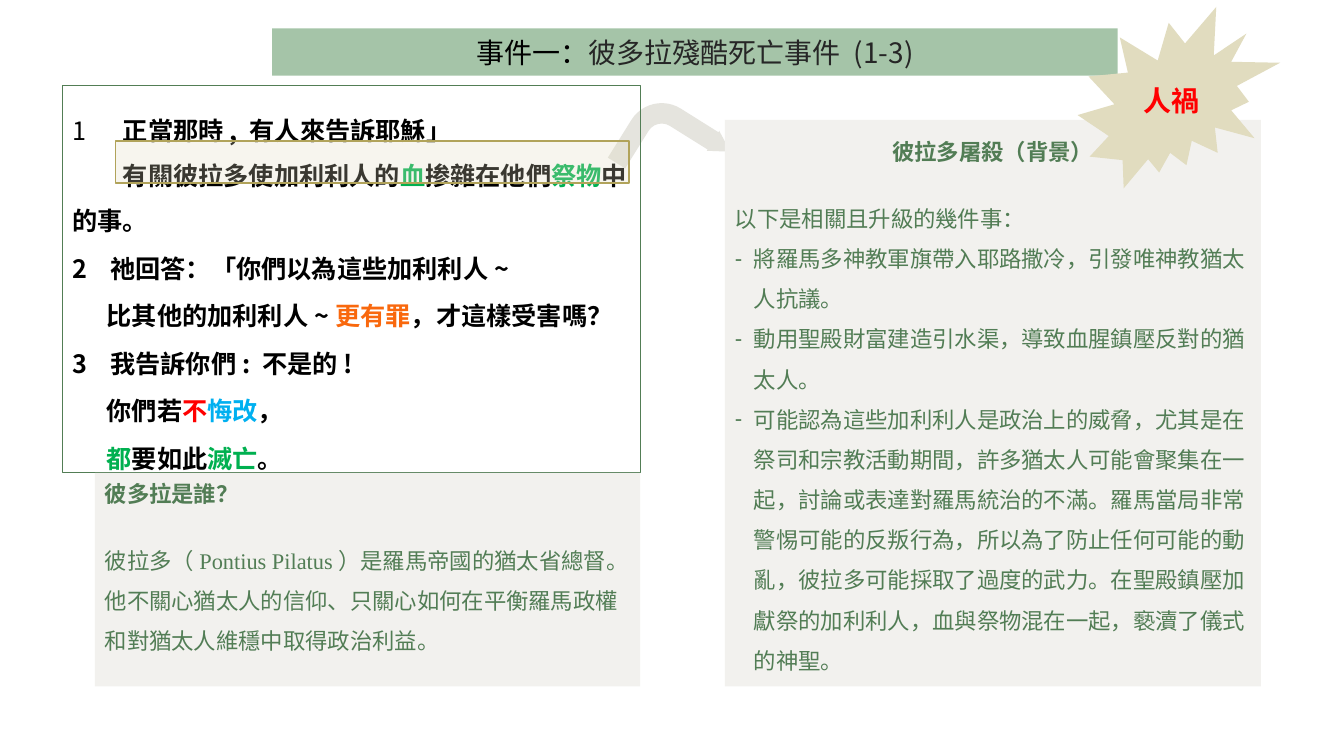
from lxml.etree import SubElement
from pptx import Presentation
from pptx.dml.color import RGBColor
from pptx.enum.shapes import MSO_SHAPE
from pptx.enum.text import MSO_ANCHOR, MSO_AUTO_SIZE, PP_ALIGN
from pptx.oxml.ns import qn
from pptx.util import Pt

BLACK = RGBColor(0, 0, 0)
INK = RGBColor(0x26, 0x26, 0x26)
GREEN = RGBColor(0x00, 0xB0, 0x50)
ORANGE = RGBColor(0xF9, 0x68, 0x0D)
RED = RGBColor(0xFF, 0x00, 0x00)
BLUE = RGBColor(0x00, 0xB0, 0xF0)
MOSS = RGBColor(0x52, 0x7D, 0x55)
SAGE = RGBColor(0x72, 0xA3, 0x76)
PALE = RGBColor(0xF2, 0xF1, 0xEE)
GREY = RGBColor(0xE5, 0xE4, 0xDE)
SAND = RGBColor(0xE1, 0xDC, 0xBF)
GOLD = RGBColor(0xB1, 0xA3, 0x5A)
SANS, HAN, SERIF = "Noto Sans CJK SC", "Noto Sans CJK TC", "Times New Roman"

VERSE = [
    ([("1", BLACK), ("\t正當那時, 有人來告訴耶穌」", BLACK)], 0, 0, None),
    ([("有關彼拉多使加利利人的", BLACK), ("血", GREEN), ("掺雜在他們", BLACK),
      ("祭物", GREEN), ("中的事。", BLACK)], 0, 36, None),
    ([("祂回答：「你們以為這些加利利人~", BLACK)], 27, -27, 2),
    ([("比其他的加利利人~", BLACK), ("更有罪", ORANGE),
      ("，才這樣受害嗎？", BLACK)], 24.5, 0, None),
    ([("我告訴你們: 不是的!", BLACK)], 27, -27, 3),
    ([("你們若", BLACK), ("不", RED), ("悔改", BLUE), ("，", BLACK)], 24.5, 0, None),
    ([("都", GREEN), ("要如此", BLACK), ("滅亡", GREEN), ("。", BLACK)], 24.5, 0, None),
]
WHO = [[("彼拉多", "Arial"), ("（Pontius Pilatus）", SERIF),
        ("是羅馬帝國的猶太省總督。他不關心猶太人的信仰、"
         "只關心如何在平衡羅馬政權和對猶太人維穩中取得政治利益。", "Arial")]]
ACTS = [
    "將羅馬多神教軍旗帶入耶路撒冷，引發唯神教猶太人抗議。",
    "動用聖殿財富建造引水渠，導致血腥鎮壓反對的猶太人。",
    "可能認為這些加利利人是政治上的威脅，尤其是在祭司和宗教活動期間，"
    "許多猶太人可能會聚集在一起，討論或表達對羅馬統治的不滿。"
    "羅馬當局非常警惕可能的反叛行為，所以為了防止任何可能的動亂，"
    "彼拉多可能採取了過度的武力。在聖殿鎮壓加獻祭的加利利人，"
    "血與祭物混在一起，褻瀆了儀式的神聖。",
]
PAST = [[(text, "Arial")] for text in ["以下是相關且升級的幾件事："] + ACTS]


def place(shape, box):
    shape.left, shape.top, shape.width, shape.height = map(Pt, box)


def paint(shape, fill=None, line=None, width=1, alpha=None):
    if fill is None:
        shape.fill.background()
    else:
        shape.fill.solid()
        shape.fill.fore_color.rgb = fill
    if alpha:
        tint = shape._element.spPr.find(qn("a:solidFill"))[0]
        SubElement(tint, qn("a:alpha")).set("val", str(alpha * 1000))
    if line is None:
        shape.line.fill.background()
    else:
        shape.line.color.rgb = line
        shape.line.width = Pt(width)


def draw(slide, kind, box):
    shape = slide.shapes.add_shape(kind, *map(Pt, box))
    shape.shadow.inherit = False
    return shape


def write(par, text, size, color, bold=False, face="Arial", east=SANS):
    run = par.add_run()
    run.text = text
    font = run.font
    font.size, font.bold, font.name = Pt(size), bold, face
    font.color.rgb = color
    SubElement(run._r.get_or_add_rPr(), qn("a:ea")).set("typeface", east)


def fit(shape, top):
    frame = shape.text_frame
    frame.word_wrap = True
    frame.auto_size = MSO_AUTO_SIZE.NONE
    frame.vertical_anchor = MSO_ANCHOR.TOP
    frame.margin_left = frame.margin_right = Pt(7.2)
    frame.margin_top, frame.margin_bottom = Pt(top), 0
    return frame


def start(frame, index, pitch, before=0):
    par = frame.add_paragraph() if index else frame.paragraphs[0]
    par.alignment = PP_ALIGN.LEFT
    par.line_spacing = Pt(pitch)
    par.space_before, par.space_after = Pt(before), Pt(0)
    return par


def mark(par, left=0, first=0, tag="buNone", **attrs):
    props = par._p.get_or_add_pPr()
    props.set("marL", str(Pt(left)))
    props.set("indent", str(Pt(first)))
    node = SubElement(props, qn("a:" + tag))
    for name, value in attrs.items():
        node.set(name, value)
    return props


def banner(shape, box):
    place(shape, box)
    paint(shape, SAGE, alpha=63)
    frame = fit(shape, 0)
    frame.vertical_anchor = MSO_ANCHOR.MIDDLE
    par = frame.paragraphs[0]
    par.alignment = PP_ALIGN.CENTER
    write(par, "事件一：", 20, BLACK, face=SANS)
    write(par, "彼多拉殘酷死亡事件 (1-3)", 20, INK, face=SANS)


def verse(slide, shape, box):
    place(shape, box)
    paint(shape, None, MOSS, 0.75)
    frame = fit(shape, 11)
    for i, (runs, left, first, num) in enumerate(VERSE):
        par = start(frame, i, 32, 2 if i > 1 else 0)
        if num:
            mark(par, left, first, "buAutoNum", type="arabicPlain", startAt=str(num))
        else:
            props = mark(par, left, first)
            if i == 0:
                tabs = SubElement(props, qn("a:tabLst"))
                stop = SubElement(tabs, qn("a:tab"))
                stop.set("pos", str(Pt(22.5)))
                stop.set("algn", "l")
        for text, color in runs:
            write(par, text, 18, color, text != "1", HAN, HAN)
    left, top, width, _ = box
    frame = draw(slide, MSO_SHAPE.RECTANGLE, (left + 38, top + 39.6, width - 46, 30))
    paint(frame, SAND, GOLD, 1, 26)


def card(shape, box, head, body, top, align=PP_ALIGN.LEFT):
    place(shape, box)
    paint(shape, PALE)
    frame = fit(shape, top)
    par = start(frame, 0, 21)
    par.alignment = align
    mark(par)
    write(par, head, 16, MOSS, True)
    for i, runs in enumerate(body, 1):
        par = start(frame, i, 28.7, 19.3 if i == 1 else 0)
        if i == 1:
            mark(par)
        else:
            mark(par, 13.6, -13.6, "buChar", char="-")
        for text, face in runs:
            write(par, text, 16, MOSS, face=face)


def arrow(slide, box):
    shape = draw(slide, MSO_SHAPE.BENT_ARROW, box)
    for i, value in enumerate((0.25, 0.143, 0.25, 0.438)):
        shape.adjustments[i] = value
    shape.rotation = 32
    paint(shape, GREY)
    slide.shapes._spTree.insert(2, shape._element)


def burst(slide, box):
    shape = draw(slide, MSO_SHAPE.EXPLOSION2, box)
    paint(shape, SAND)
    frame = shape.text_frame
    frame.vertical_anchor = MSO_ANCHOR.MIDDLE
    par = frame.paragraphs[0]
    par.alignment = PP_ALIGN.CENTER
    write(par, "人禍", 20, RED, True)


def main():
    deck = Presentation()
    deck.slide_width, deck.slide_height = Pt(960), Pt(540)
    slide = deck.slides.add_slide(deck.slide_layouts[3])
    title, left, right = slide.placeholders
    arrow(slide, (444.2, 77.8, 72, 58.3))
    banner(title, (194.4, 20.2, 604, 33.8))
    who = draw(slide, MSO_SHAPE.RECTANGLE, (0, 0, 1, 1))
    card(who, (67.7, 337.7, 389.5, 152.6), "彼多拉是誰？", WHO, 3.3)
    card(right, (517.7, 85.7, 383, 404.6), "彼拉多屠殺（背景）", PAST, 11, PP_ALIGN.CENTER)
    verse(slide, left, (44.6, 61.2, 412.6, 276.5))
    burst(slide, (769.7, 5, 144.7, 129.6))
    deck.save("out.pptx")


if __name__ == "__main__":
    main()
